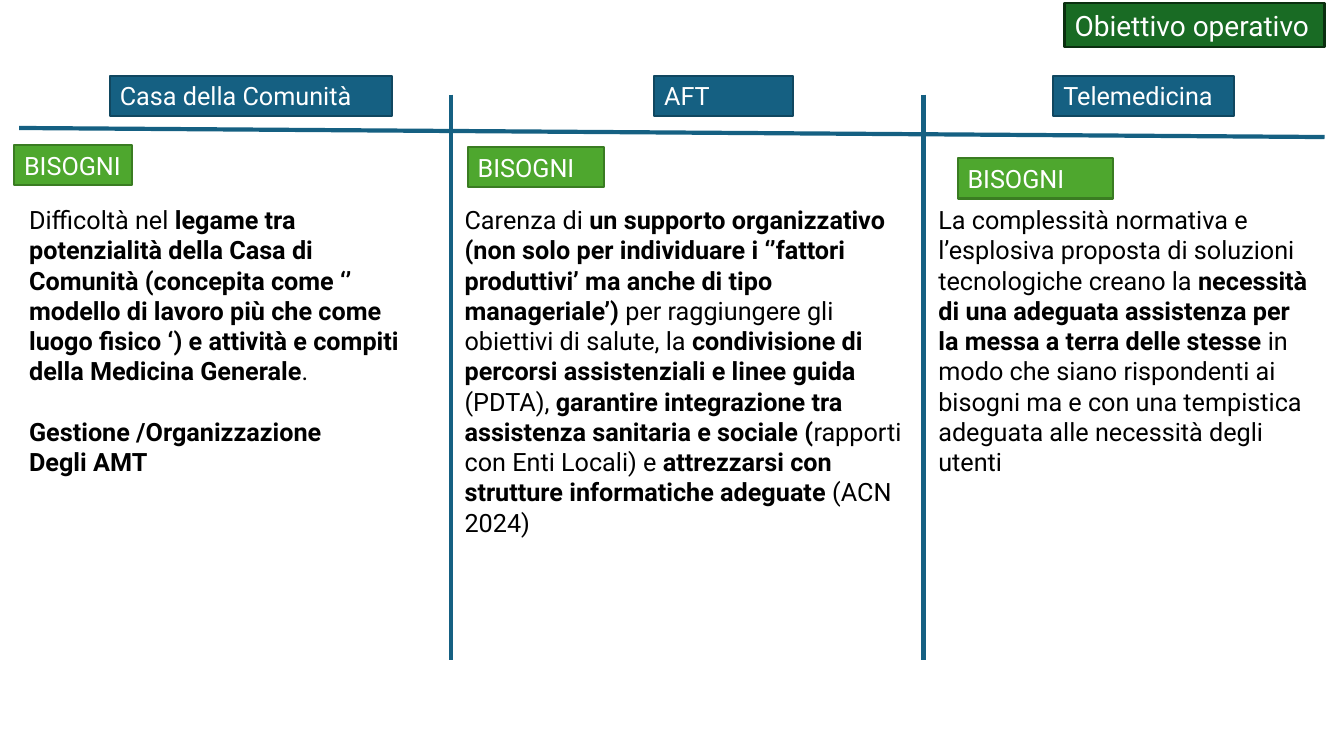
"""Build the slide on needs and the operational objective."""
import pptx
import pptx.dml.color
import pptx.enum.shapes
import pptx.enum.text
import pptx.oxml.ns
import pptx.util
from lxml import etree

WIDTH = pptx.util.Inches(13.33)
HEIGHT = pptx.util.Inches(7.5)
FONT = "Roboto"
COLOURS = {
    "text": "000000",
    "white": "FFFFFF",
    "blue": "156082",
    "blue_edge": "104760",
    "green": "4EA72E",
    "green_edge": "3A7C22",
    "dark": "196B24",
    "dark_edge": "0B2F10",
}
TAG_HEIGHT = 5.33
HEADER_TOP = 10
BODY_TOP = 26.4
DIVIDER_TOP, DIVIDER_BOTTOM = 12.53, 87.33
DIVIDERS = (33.53, 68.72)
COLUMNS = (
    {
        "title": "Casa della Comunità",
        "header": (8.18, 21),
        "needs": (1.05, 19.2, 8.78),
        "needs_wrap": False,
        "body": (1.43, 31.2, 37.73),
        "text": "Difficoltà nel **legame tra potenzialità della Casa di Comunità "
                "(concepita come ‘’ modello di lavoro più che come luogo fisico ‘) "
                "e attività e compiti della Medicina Generale**.\n"
                "**Gestione /Organizzazione**\n**Degli AMT**",
        "gaps": {1: 21.75},
    },
    {
        "title": "AFT",
        "header": (48.68, 10.35),
        "needs": (34.8, 19.47, 10.13),
        "needs_wrap": True,
        "body": (33.83, 34.95, 45.73),
        "text": "Carenza di **un supporto organizzativo (non solo per individuare i "
                "‘’fattori produttivi’ ma anche di tipo manageriale’) **per raggiungere "
                "gli obiettivi di salute, la **condivisione di percorsi assistenziali e "
                "linee guida **(PDTA), **garantire integrazione tra assistenza sanitaria "
                "e sociale (**rapporti con Enti Locali) e **attrezzarsi con strutture "
                "informatiche adeguate **(ACN 2024)",
        "gaps": {},
    },
    {
        "title": "Telemedicina",
        "header": (78.38, 13.43),
        "needs": (71.25, 20.93, 11.55),
        "needs_wrap": True,
        "body": (69.08, 29.55, 37.73),
        "text": "La complessità normativa e l’esplosiva proposta di soluzioni "
                "tecnologiche creano la **necessità di una adeguata assistenza per la "
                "messa a terra delle stesse **in modo che siano rispondenti ai bisogni "
                "ma e con una tempistica adeguata alle necessità degli utenti",
        "gaps": {},
    },
)


def across(share):
    """Return a percentage of the slide's width."""
    return round(WIDTH * share / 100)


def down(share):
    """Return a percentage of the slide's height."""
    return round(HEIGHT * share / 100)


def area(left, top, width, height):
    """Return a rectangle given in percentages of the slide."""
    return across(left), down(top), across(width), down(height)


def colour(name):
    """Return a named colour."""
    return pptx.dml.color.RGBColor.from_string(COLOURS[name])


def write(shape, text, size=18, tint="text", wrap=True, grow=True, gaps=None):
    """Write lines of text in which double asterisks switch bold on and off."""
    sizing = pptx.enum.text.MSO_AUTO_SIZE
    frame = shape.text_frame
    frame.word_wrap = wrap
    frame.auto_size = sizing.SHAPE_TO_FIT_TEXT if grow else sizing.NONE
    frame.vertical_anchor = pptx.enum.text.MSO_ANCHOR.TOP
    for index, line in enumerate(text.split("\n")):
        paragraph = frame.add_paragraph() if index else frame.paragraphs[0]
        paragraph.alignment = pptx.enum.text.PP_ALIGN.LEFT
        if gaps and index in gaps:
            paragraph.space_before = pptx.util.Pt(gaps[index])
        for position, part in enumerate(line.split("**")):
            if part:
                run = paragraph.add_run()
                run.text = part
                run.font.name = FONT
                run.font.size = pptx.util.Pt(size)
                run.font.bold = position % 2 == 1
                run.font.color.rgb = colour(tint)


def paint(shape, fill):
    """Fill a label and outline it in the matching darker colour."""
    shape.fill.solid()
    shape.fill.fore_color.rgb = colour(fill)
    shape.line.color.rgb = colour(fill + "_edge")
    shape.line.width = pptx.util.Pt(1.5)


def add_title(slide, text):
    """Format the title placeholder as the label in the top right corner."""
    title = slide.shapes.title
    title.left, title.top, title.width, title.height = area(79.2, 0.4, 19.35, 5.87)
    paint(title, "dark")
    write(title, text, size=20, tint="white", grow=False)


def add_tag(slide, text, place, fill, wrap=True):
    """Add a coloured rectangular label."""
    rectangle = pptx.enum.shapes.MSO_SHAPE.RECTANGLE
    tag = slide.shapes.add_shape(rectangle, *area(*place))
    tag.shadow.inherit = False
    paint(tag, fill)
    write(tag, text, tint="white", wrap=wrap)


def add_rule(slide, left, top, right, bottom):
    """Add a straight blue line between two points."""
    rule = slide.shapes.add_connector(
        pptx.enum.shapes.MSO_CONNECTOR.STRAIGHT,
        across(left), down(top), across(right), down(bottom))
    rule.line.color.rgb = colour("blue")
    rule.line.width = pptx.util.Pt(3)
    etree.SubElement(rule._element.spPr, pptx.oxml.ns.qn("a:effectLst"))


def add_column(slide, column):
    """Add a column's header, needs label and description."""
    left, width = column["header"]
    add_tag(slide, column["title"], (left, HEADER_TOP, width, TAG_HEIGHT), "blue")
    add_tag(slide, "BISOGNI", (*column["needs"], TAG_HEIGHT), "green",
            wrap=column["needs_wrap"])
    left, width, height = column["body"]
    body = slide.shapes.add_textbox(*area(left, BODY_TOP, width, height))
    write(body, column["text"], gaps=column["gaps"])


def main():
    """Create the presentation and save it."""
    presentation = pptx.Presentation()
    presentation.slide_width, presentation.slide_height = WIDTH, HEIGHT
    slide = presentation.slides.add_slide(presentation.slide_layouts[5])
    add_title(slide, "Obiettivo operativo")
    for divider in DIVIDERS:
        add_rule(slide, divider, DIVIDER_TOP, divider, DIVIDER_BOTTOM)
    add_rule(slide, 1.43, 16.93, 98.55, 18.13)
    for column in COLUMNS:
        add_column(slide, column)
    presentation.save("out.pptx")


if __name__ == "__main__":
    main()
